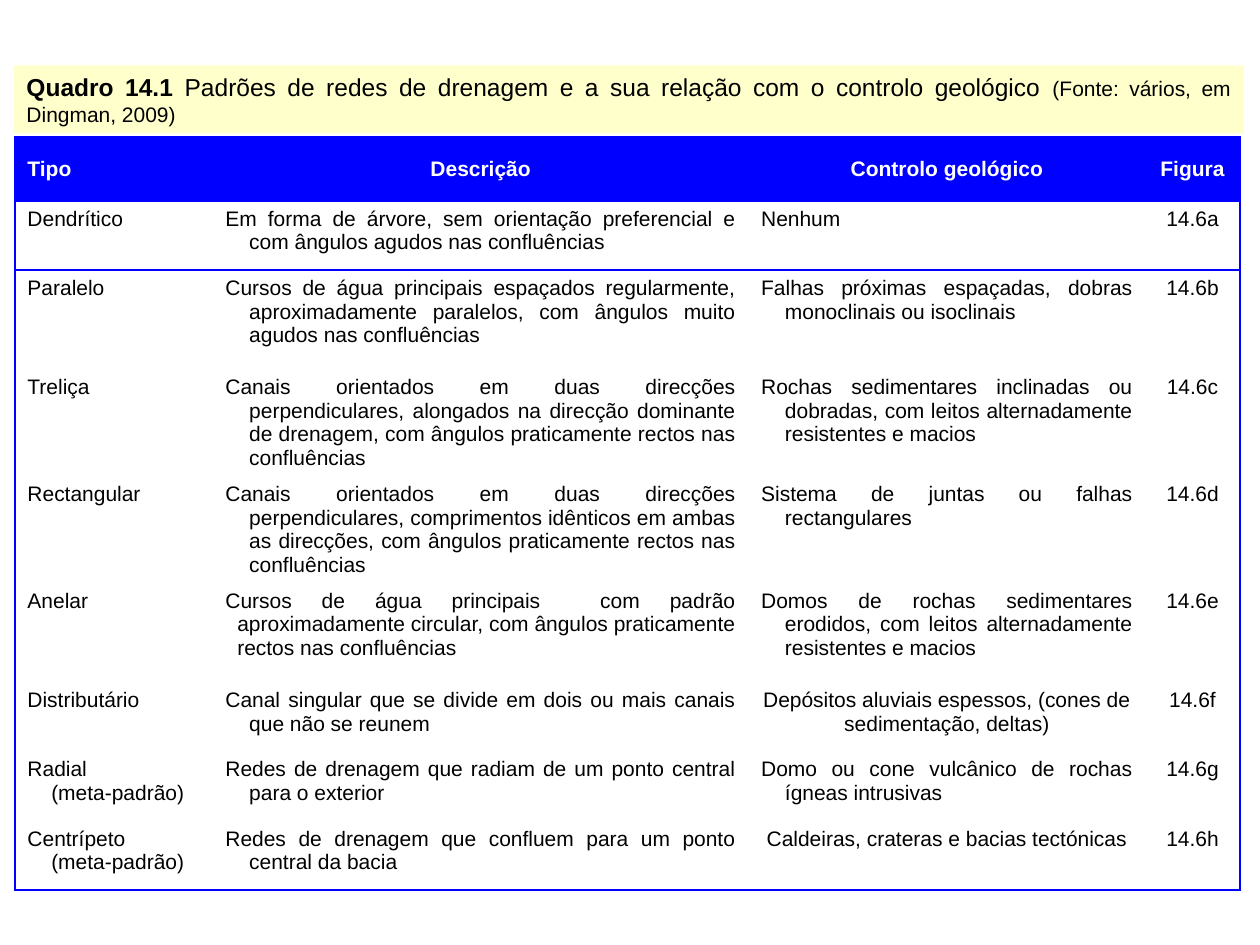
from pptx import Presentation
from pptx.dml.color import RGBColor as Rgb
from pptx.enum.text import MSO_ANCHOR as Anchor, MSO_AUTO_SIZE as Fit, PP_ALIGN as Align
from pptx.oxml.ns import qn
from pptx.util import Cm, Pt
from lxml.etree import SubElement as Sub

BLUE, CREAM, BLACK, WHITE = "0000FF", "FFFFCC", "000000", "FFFFFF"
HANG = 0.48
LEFT, MID, JUST = Align.LEFT, Align.CENTER, Align.JUSTIFY

COLS = [3.99, 10.8, 8, 1.9]
ROWS = [1.3, 1.4, 2, 2, 2, 2, 1.4, 1.4, 1.4]
RULED = {0, 1, len(ROWS) - 1}  # rows with a line below
HEAD = ["Tipo", "Descrição", "Controlo geológico", "Figura"]
META = "(meta-padrão)"

# Type, description, geological control; the figure letter follows the order
DATA = [
    ("Dendrítico",
     "Em forma de árvore, sem orientação preferencial e com ângulos agudos nas confluências",
     "Nenhum"),
    ("Paralelo",
     "Cursos de água principais espaçados regularmente, aproximadamente paralelos, "
     "com ângulos muito agudos nas confluências",
     "Falhas próximas espaçadas, dobras monoclinais ou isoclinais"),
    ("Treliça",
     "Canais orientados em duas direcções perpendiculares, alongados na direcção "
     "dominante de drenagem, com ângulos praticamente rectos nas confluências",
     "Rochas sedimentares inclinadas ou dobradas, com leitos alternadamente "
     "resistentes e macios"),
    ("Rectangular",
     "Canais orientados em duas direcções perpendiculares, comprimentos idênticos em "
     "ambas as direcções, com ângulos praticamente rectos nas confluências",
     "Sistema de juntas ou falhas rectangulares"),
    ("Anelar",
     "Cursos de água principais  com padrão aproximadamente circular, com ângulos "
     "praticamente rectos nas confluências",
     "Domos de rochas sedimentares erodidos, com leitos alternadamente resistentes e macios"),
    ("Distributário",
     "Canal singular que se divide em dois ou mais canais que não se reunem",
     "Depósitos aluviais espessos, (cones de sedimentação, deltas)"),
    ("Radial\n" + META,
     "Redes de drenagem que radiam de um ponto central para o exterior",
     "Domo ou cone vulcânico de rochas ígneas intrusivas"),
    ("Centrípeto\n" + META,
     "Redes de drenagem que confluem para um ponto central da bacia",
     "Caldeiras, crateras e bacias tectónicas"),
]
CENTRED = {"Distributário", "Centrípeto\n" + META}  # control text centred
NARROW = {"Anelar"}  # description with half the hanging indent


def paint(text):
    return Rgb.from_string(text)


class Deck:
    font, size = "Arial", 12

    def __init__(self):
        self.prs = Presentation()
        self.prs.slide_width, self.prs.slide_height = Cm(25.4), Cm(19.05)
        self.slide = self.prs.slides.add_slide(self.prs.slide_layouts[5])

    def style(self, font, color, bold=False, size=None):
        font.name, font.size = self.font, Pt(size or self.size)
        font.bold, font.color.rgb = bold, paint(color)

    def title(self, box, runs):
        shape = self.slide.shapes.title
        shape.left, shape.top, shape.width, shape.height = map(Cm, box)
        shape.fill.solid()
        shape.fill.fore_color.rgb = paint(CREAM)
        frame = shape.text_frame
        frame.word_wrap, frame.auto_size = True, Fit.NONE
        frame.vertical_anchor = Anchor.MIDDLE
        par = frame.paragraphs[0]
        par.alignment = JUST
        for text, size, bold in runs:
            run = par.add_run()
            run.text = text
            self.style(run.font, BLACK, bold, size)

    def table(self, left, top):
        shape = self.slide.shapes.add_table(
            len(ROWS), len(COLS), Cm(left), Cm(top), Cm(sum(COLS)), Cm(sum(ROWS)))
        grid = shape.table
        grid.first_row = grid.horz_banding = False
        for col, width in zip(grid.columns, COLS):
            col.width = Cm(width)
        for row, height in zip(grid.rows, ROWS):
            row.height = Cm(height)
        return grid

    def cell(self, cell, text, align, hang=0, head=False):
        cell.text = text
        cell.vertical_anchor = Anchor.MIDDLE if head else Anchor.TOP
        for num, par in enumerate(cell.text_frame.paragraphs):
            par.alignment = align
            self.style(par.font, WHITE if head else BLACK, head)
            if num:
                self.indent(par, 0, HANG)
            elif hang:
                self.indent(par, hang, -hang)
        if head:
            cell.fill.solid()
            cell.fill.fore_color.rgb = paint(BLUE)
        else:
            cell.fill.background()

    def indent(self, par, margin, first):
        props = par._p.get_or_add_pPr()
        props.set("marL", str(Cm(margin)))
        props.set("indent", str(Cm(first)))

    def edges(self, cell, sides):
        props = cell._tc.get_or_add_tcPr()
        for side in "LRTB":
            line = Sub(props, qn("a:ln" + side), w=str(Pt(1.5)))
            if side in sides:
                Sub(Sub(line, qn("a:solidFill")), qn("a:srgbClr"), val=BLUE)
            else:
                Sub(line, qn("a:noFill"))


def main():
    deck = Deck()

    # Caption band
    deck.title((0.28, 1.32, 24.79, 1.37), [
        ("Quadro 14.1 ", 14, True),
        ("Padrões de redes de drenagem e a sua relação com o controlo geológico ", 14, False),
        ("(Fonte: vários, em Dingman, 2009)", 12, False)])

    # Table frame: outer sides and ruled rows
    grid = deck.table(0.3, 2.75)
    for r in range(len(ROWS)):
        for c in range(len(COLS)):
            marks = {"L": c == 0, "R": c == len(COLS) - 1,
                     "T": r - 1 in RULED, "B": r in RULED}
            deck.edges(grid.cell(r, c), [side for side, on in marks.items() if on])

    # Header
    for c, text in enumerate(HEAD):
        deck.cell(grid.cell(0, c), text, MID if c else LEFT, head=True)

    # Drainage patterns
    for r, (kind, about, cause) in enumerate(DATA, 1):
        mid = kind in CENTRED
        deck.cell(grid.cell(r, 0), kind, LEFT)
        deck.cell(grid.cell(r, 1), about, JUST, HANG / 2 if kind in NARROW else HANG)
        deck.cell(grid.cell(r, 2), cause, MID if mid else JUST, 0 if mid else HANG)
        deck.cell(grid.cell(r, 3), "14.6" + "abcdefgh"[r - 1], MID)

    deck.prs.save("out.pptx")


if __name__ == "__main__":
    main()
